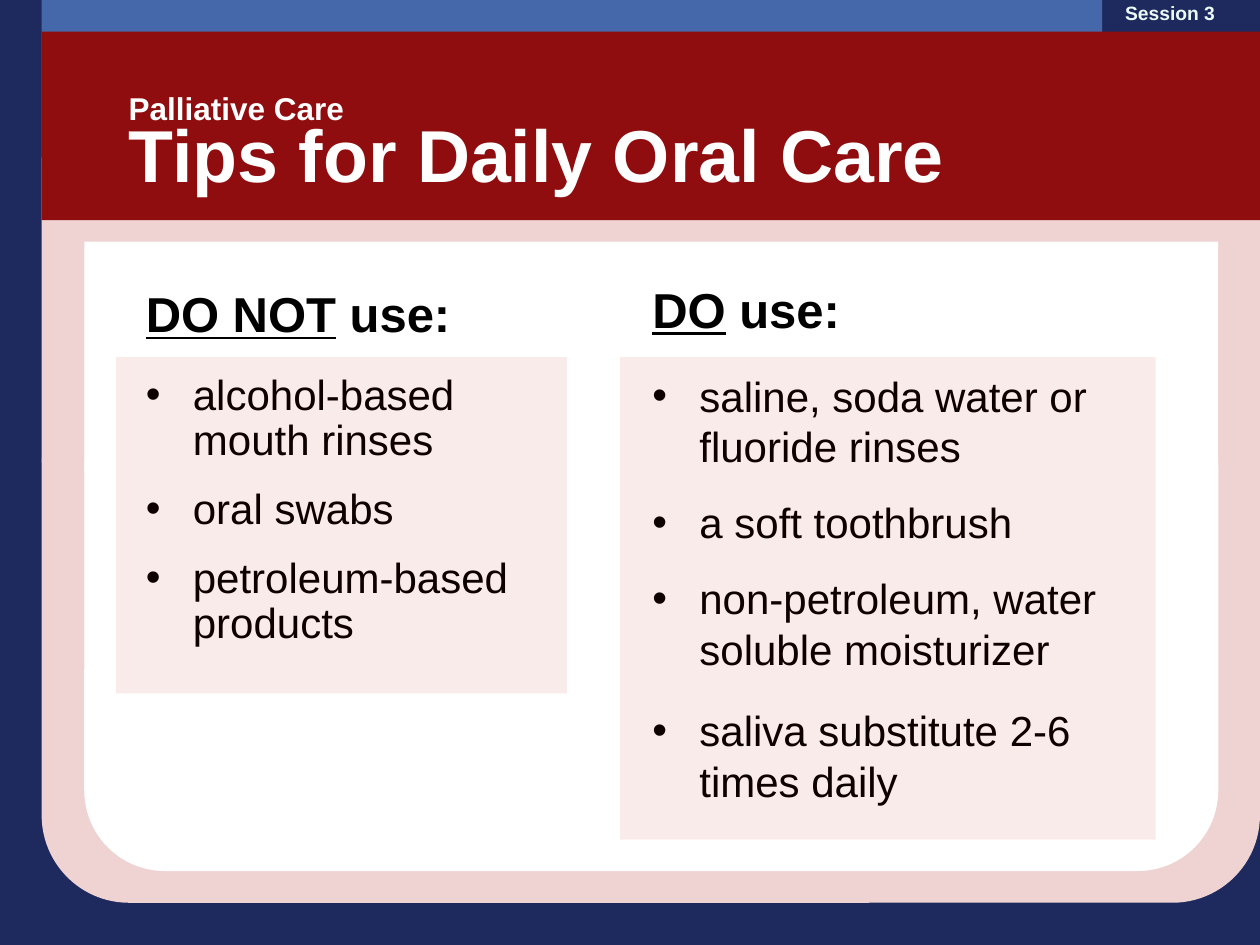
"""Build the slide on tips for daily oral care."""
from lxml import etree
from pptx import Presentation
from pptx import util as u
from pptx.dml.color import RGBColor
from pptx.enum import shapes, text
from pptx.oxml import ns

NAVY = RGBColor(0x1E, 0x2A, 0x5E)
BLUE = RGBColor(0x45, 0x68, 0xAA)
RED = RGBColor(0x8F, 0x0D, 0x0E)
PINK = RGBColor(0xEF, 0xD2, 0xD2)
TINT = RGBColor(0xC0, 0x00, 0x00)
MINT = RGBColor(0xEC, 0xFA, 0xF7)
WHITE = RGBColor(0xFF, 0xFF, 0xFF)
BLACK = RGBColor(0x00, 0x00, 0x00)

RECT = shapes.MSO_SHAPE.RECTANGLE
ROUND = shapes.MSO_SHAPE.ROUNDED_RECTANGLE

FRAME = [
    (RECT, (0, 0, 25.4, 19.05), NAVY),
    (ROUND, (0.84, 7.62, 24.56, 10.58), PINK),
    (RECT, (0.84, 3.18, 24.56, 6.14), PINK),
    (ROUND, (1.7, 7.8, 22.86, 9.76), WHITE),
    (RECT, (1.7, 4.87, 22.86, 4.66), WHITE),
    (RECT, (0.84, 0, 21.38, 3.38), BLUE),
    (RECT, (0.84, 0.64, 24.56, 3.8), RED),
]
SESSION = ("Session 3", (22.43, -0.1, 3.18, 0.97))
TITLE = [("Palliative Care", 18), ("Tips for Daily Oral Care", 42)]
TITLE_BOX = (2.34, 1.07, 21.97, 2.97)

LISTS = [
    dict(key="DO", box=(12.9, 5.51, 10.59, 12.57), panel=(12.5, 7.2, 10.8, 9.73),
         head=33.5, line=28.8,
         items=[("saline, soda water or fluoride rinses", 18.4),
                ("a soft toothbrush", 14.6),
                ("non-petroleum, water soluble moisturizer", 14.6),
                ("saliva substitute 2-6 times daily", 18)]),
    dict(key="DO NOT", box=(2.69, 5.72, 8.94, 12.57), panel=(2.34, 7.2, 9.09, 6.78),
         head=30, line=25.8,
         items=[("alcohol-based mouth rinses", 18),
                ("oral swabs", 13.6),
                ("petroleum-based products", 13.6)]),
]
HANG = u.Cm(0.95)


def add_run(para, words, size, color, bold=True, under=False):
    run = para.add_run()
    run.text = words
    font = run.font
    font.name, font.size, font.bold = "Arial", u.Pt(size), bold
    font.underline = under
    font.color.rgb = color


def add_block(slide, kind, box, color, alpha=None):
    block = slide.shapes.add_shape(kind, *map(u.Cm, box))
    block.shadow.inherit = False
    block.fill.solid()
    block.fill.fore_color.rgb = color
    block.line.fill.background()
    if alpha:
        tone = block.fill._xPr.find(".//" + ns.qn("a:srgbClr"))
        etree.SubElement(tone, ns.qn("a:alpha"), val=str(alpha * 1000))


def add_box(slide, box):
    frame = slide.shapes.add_textbox(*map(u.Cm, box)).text_frame
    frame.word_wrap = True
    return frame


def add_title(slide):
    title = slide.shapes.title
    title.left, title.top, title.width, title.height = map(u.Cm, TITLE_BOX)
    frame = title.text_frame
    frame.auto_size = text.MSO_AUTO_SIZE.NONE
    frame.vertical_anchor = text.MSO_ANCHOR.MIDDLE
    para = frame.paragraphs[0]
    para.alignment = text.PP_ALIGN.LEFT
    para.line_spacing = u.Pt(40)
    para.space_before = u.Pt(0)
    for num, (words, size) in enumerate(TITLE):
        if num:
            para.add_line_break()
        add_run(para, words, size, WHITE)
    slide.shapes._spTree.append(title._element)


def add_list(slide, part):
    frame = add_box(slide, part["box"])
    head = frame.paragraphs[0]
    head.line_spacing = u.Pt(part["head"])
    add_run(head, part["key"], 28, BLACK, under=True)
    add_run(head, " use:", 28, BLACK)
    for words, gap in part["items"]:
        para = frame.add_paragraph()
        para.line_spacing = u.Pt(part["line"])
        para.space_before = u.Pt(gap)
        props = para._p.get_or_add_pPr()
        props.set("marL", str(HANG))
        props.set("indent", str(-HANG))
        etree.SubElement(props, ns.qn("a:buFont"), typeface="Arial")
        etree.SubElement(props, ns.qn("a:buChar"), char="•")
        add_run(para, words, 24, BLACK, bold=False)


def main():
    deck = Presentation()
    deck.slide_width, deck.slide_height = u.Cm(25.4), u.Cm(19.05)
    slide = deck.slides.add_slide(deck.slide_layouts[5])
    for kind, box, color in FRAME:
        add_block(slide, kind, box, color)
    words, box = SESSION
    add_run(add_box(slide, box).paragraphs[0], words, 11, MINT)
    add_title(slide)
    for part in LISTS:
        add_list(slide, part)
    for part in LISTS:
        add_block(slide, RECT, part["panel"], TINT, alpha=8)
    deck.save("out.pptx")


if __name__ == "__main__":
    main()
